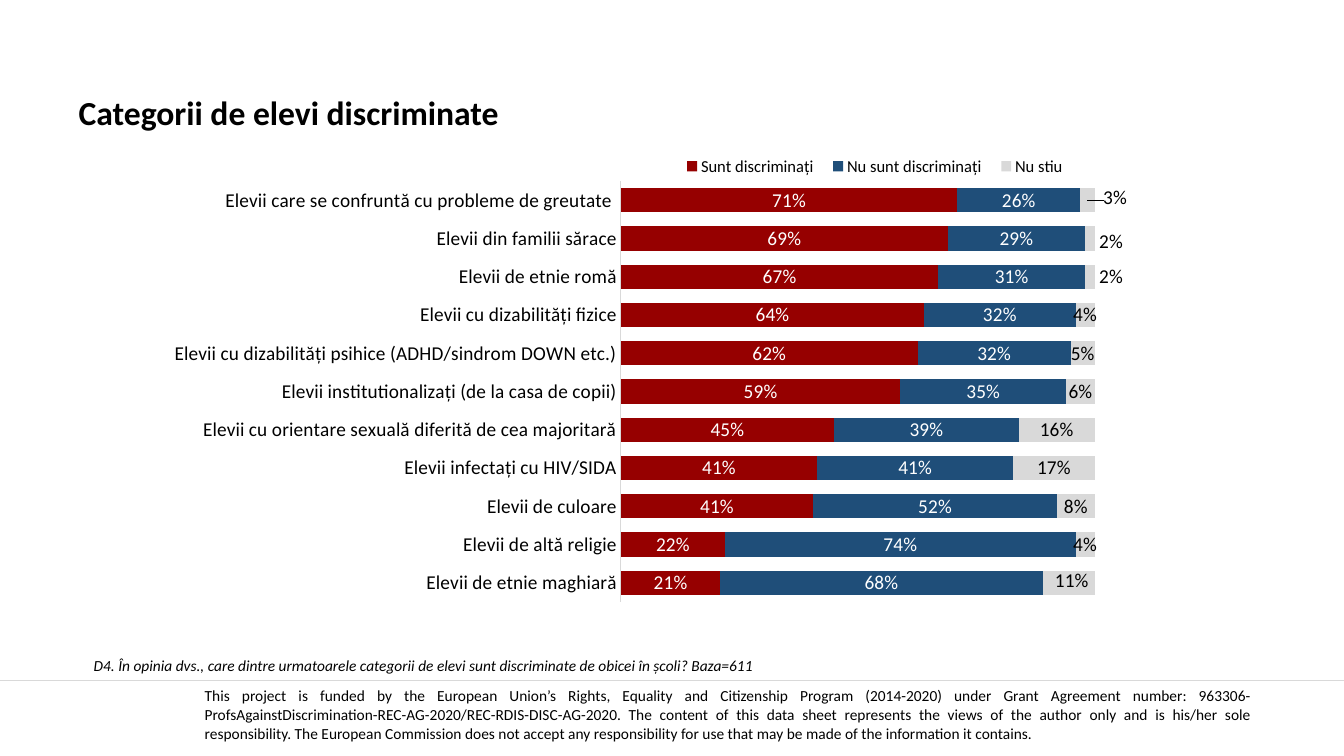
"""Builds the slide on categories of pupils who face discrimination."""
import pptx
import pptx.util
import pptx.chart.data
import pptx.dml.color
import pptx.enum.chart
import pptx.enum.shapes
import pptx.enum.text
import pptx.oxml
import pptx.oxml.ns
import lxml.etree

PX = 9144
FONT = "Calibri"
COLORS = {"black": "000000", "white": "FFFFFF", "red": "960000",
          "blue": "1F4E79", "grey": "D9D9D9"}
RGB = {k: pptx.dml.color.RGBColor.from_string(v) for k, v in COLORS.items()}
qn = pptx.oxml.ns.qn


def set_font(font, size, color="black"):
    font.name = FONT
    font.size = pptx.util.Pt(size)
    font.color.rgb = RGB[color]


def add_layout(previous, **values):
    layout = lxml.etree.Element(qn("c:layout"))
    manual = lxml.etree.SubElement(layout, qn("c:manualLayout"))
    for tag, value in values.items():
        lxml.etree.SubElement(manual, qn("c:" + tag)).set("val", str(value))
    previous.addnext(layout)


prs = pptx.Presentation()
prs.slide_width, prs.slide_height = 1333 * PX, 750 * PX
s = prs.slides.add_slide(prs.slide_layouts[5])

title = s.shapes.title
title.left, title.top, title.width, title.height = [v * PX for v in (68, 86, 531, 50)]
note = s.shapes.add_textbox(*[v * PX for v in (83, 646, 1205, 29)])
texts = [
    (title, "Categorii de elevi discriminate", 24, True, False),
    (note, "D4. În opinia dvs., care dintre urmatoarele categorii de elevi sunt "
     "discriminate de obicei în școli? Baza=611", 11, False, True),
]
for sp, text, size, bold, italic in texts:
    tf = sp.text_frame
    tf.text = text
    tf.word_wrap = True
    tf.auto_size = pptx.enum.text.MSO_AUTO_SIZE.NONE
    tf.vertical_anchor = pptx.enum.text.MSO_ANCHOR.TOP
    p = tf.paragraphs[0]
    p.alignment = pptx.enum.text.PP_ALIGN.LEFT
    r = p.runs[0]
    set_font(r.font, size)
    r.font.bold, r.font.italic = bold, italic

categories = [
    ("Elevii care se confruntă cu probleme de greutate ", 0.71, 0.26, 0.03),
    ("Elevii din familii sărace", 0.69, 0.29, 0.02),
    ("Elevii de etnie romă", 0.67, 0.31, 0.02),
    ("Elevii cu dizabilități fizice", 0.64, 0.32, 0.04),
    ("Elevii cu dizabilități psihice (ADHD/sindrom DOWN etc.)", 0.62, 0.32, 0.05),
    ("Elevii institutionalizați (de la casa de copii)", 0.59, 0.35, 0.06),
    ("Elevii cu orientare sexuală diferită de cea majoritară", 0.45, 0.39, 0.16),
    ("Elevii infectați cu HIV/SIDA", 0.41, 0.41, 0.17),
    ("Elevii de culoare", 0.41, 0.52, 0.08),
    ("Elevii de altă religie", 0.22, 0.74, 0.04),
    ("Elevii de etnie maghiară", 0.21, 0.68, 0.11),
]
answers = [("Sunt discriminați", "red", "white"),
           ("Nu sunt discriminați", "blue", "white"),
           ("Nu stiu", "grey", "black")]
names, *columns = zip(*categories)
data = pptx.chart.data.CategoryChartData(number_format="###0%")
data.categories = names
for (name, _, _), values in zip(answers, columns):
    data.add_series(name, values)

chart = s.shapes.add_chart(pptx.enum.chart.XL_CHART_TYPE.BAR_STACKED_100,
                           *[v * PX for v in (46, 137, 1072, 509)], data).chart
set_font(chart.font, 10)
chart.has_title = False
chart.has_legend = True
legend = chart.legend
legend.position = pptx.enum.chart.XL_LEGEND_POSITION.TOP
legend.include_in_layout = False
set_font(legend.font, 12)
add_layout(legend._element.find(qn("c:legendPos")), xMode="edge", yMode="edge",
           x=0.59, y=0.03, w=0.38, h=0.05)

plot_area = chart.plots[0]._element.getparent()
for old in plot_area.findall(qn("c:layout")):
    plot_area.remove(old)
add_layout(plot_area[0], layoutTarget="inner", xMode="edge", yMode="edge",
           x=0.541, y=0.084, w=0.446, h=0.82)
plot_area.insert(0, plot_area.find(qn("c:layout")))

axis = chart.category_axis
axis.reverse_order = True
axis.major_tick_mark = pptx.enum.chart.XL_TICK_MARK.NONE
axis.format.line.color.rgb = RGB["grey"]
axis.format.line.width = pptx.util.Pt(0.75)
set_font(axis.tick_labels.font, 14)
chart.value_axis.visible = False
chart.value_axis.has_major_gridlines = False
chart.value_axis.minimum_scale = 0

plot = chart.plots[0]
plot.gap_width, plot.overlap = 57, 100
plot.vary_by_categories = False
for series, (_, fill, color) in zip(plot.series, answers):
    series.format.fill.solid()
    series.format.fill.fore_color.rgb = RGB[fill]
    labels = series.data_labels
    labels.show_value = True
    labels.number_format = "###0%"
    labels.number_format_is_linked = False
    labels.position = pptx.enum.chart.XL_LABEL_POSITION.CENTER
    set_font(labels.font, 14, color)

label_shifts = {0: (0.026, -0.005), 1: (0.02, 0.006), 2: (0.02, 0), 10: (0.003, -0.004)}
unsure = plot.series[2]
for i, (dx, dy) in label_shifts.items():
    label = unsure.points[i].data_label
    label.position = pptx.enum.chart.XL_LABEL_POSITION.CENTER
    set_font(label.font, 14)
    item = unsure.data_labels._element.find(f"{qn('c:dLbl')}[{i + 1 if i < 3 else 4}]")
    add_layout(item.find(qn("c:idx")), x=dx, y=dy)

rule = s.shapes.add_connector(pptx.enum.shapes.MSO_CONNECTOR.STRAIGHT,
                              0, 675 * PX, 1333 * PX, 675 * PX)
rule.line.color.rgb = RGB["grey"]
rule.line.width = pptx.util.Pt(0.5)
lxml.etree.SubElement(rule._element.spPr, qn("a:effectLst"))

table = s.shapes.add_table(1, 1, *[v * PX for v in (203, 658, 1039, 104)]).table
table.first_row = table.horz_banding = False
cell = table.cell(0, 0)
cell.fill.background()
cell.margin_left = cell.margin_right = cell.margin_top = cell.margin_bottom = 0
cell.vertical_anchor = pptx.enum.text.MSO_ANCHOR.MIDDLE
cell.text_frame.text = (
    "This project is funded by the European Union’s Rights, Equality and Citizenship "
    "Program (2014-2020) under Grant Agreement number: "
    "963306-ProfsAgainstDiscrimination-REC-AG-2020/REC-RDIS-DISC-AG-2020. The content of "
    "this data sheet represents the views of the author only and is his/her sole "
    "responsibility. The European Commission does not accept any responsibility for use "
    "that may be made of the information it contains.")
p = cell.text_frame.paragraphs[0]
p.alignment = pptx.enum.text.PP_ALIGN.JUSTIFY
set_font(p.runs[0].font, 11)
borders = cell._tc.get_or_add_tcPr()
for i, side in enumerate(("a:lnL", "a:lnR", "a:lnT", "a:lnB")):
    line = lxml.etree.Element(qn(side))
    lxml.etree.SubElement(line, qn("a:noFill"))
    borders.insert(i, line)

prs.save("out.pptx")
